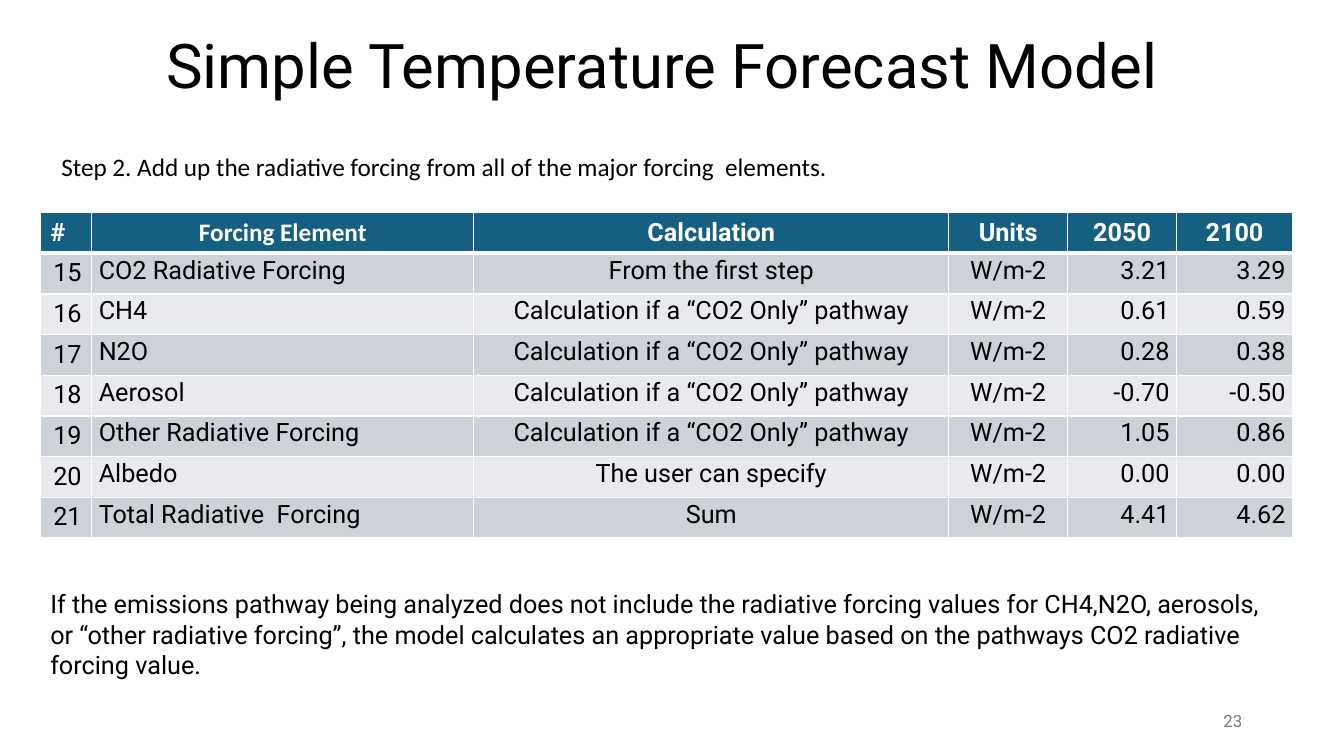
from lxml.etree import SubElement
from pptx import Presentation
from pptx.dml.color import RGBColor
from pptx.enum.text import MSO_ANCHOR, MSO_AUTO_SIZE, PP_ALIGN
from pptx.oxml.ns import qn
from pptx.util import Inches, Pt

BLACK = RGBColor(0x00, 0x00, 0x00)
WHITE = RGBColor(0xFF, 0xFF, 0xFF)
GREY = RGBColor(0x79, 0x79, 0x79)
TEAL = RGBColor(0x15, 0x60, 0x82)
BANDS = [RGBColor(0xCC, 0xD2, 0xD8), RGBColor(0xE8, 0xEA, 0xED)]
LEFT, CENTER, RIGHT = PP_ALIGN.LEFT, PP_ALIGN.CENTER, PP_ALIGN.RIGHT

TITLE = "Simple Temperature Forecast Model"
STEP = "Step 2. Add up the radiative forcing from all of the major forcing  elements."
NOTE = (
    "If the emissions pathway being analyzed does not include the radiative forcing "
    "values for CH4,N2O, aerosols, or “other radiative forcing”, the model calculates "
    "an appropriate value based on the pathways CO2 radiative forcing value."
)
PAGE = "23"

HEADERS = ["#", "Forcing Element", "Calculation", "Units", "2050", "2100"]
PATHWAY = "Calculation if a “CO2 Only” pathway"
UNITS = "W/m-2"
FIRST_NUMBER = 15
FORCINGS = [
    ("CO2 Radiative Forcing", "From the first step", "3.21", "3.29"),
    ("CH4", PATHWAY, "0.61", "0.59"),
    ("N2O", PATHWAY, "0.28", "0.38"),
    ("Aerosol", PATHWAY, "-0.70", "-0.50"),
    ("Other Radiative Forcing", PATHWAY, "1.05", "0.86"),
    ("Albedo", "The user can specify", "0.00", "0.00"),
    ("Total Radiative  Forcing", "Sum", "4.41", "4.62"),
]
COL_WIDTHS = [0.51, 3.79, 4.71, 1.18, 1.08, 1.15]
COL_ALIGNS = [RIGHT, LEFT, CENTER, CENTER, RIGHT, RIGHT]
TABLE_HEIGHT = 3.23


def write(tf, text, size=18, color=BLACK, align=LEFT, font="Roboto", bold=False):
    p = tf.paragraphs[0]
    p.alignment = align
    r = p.add_run()
    r.text = text
    r.font.name = font
    r.font.size = Pt(size)
    r.font.bold = bold
    r.font.color.rgb = color
    return p


def add_text(s, x, y, w, h):
    tf = s.shapes.add_textbox(Inches(x), Inches(y), Inches(w), Inches(h)).text_frame
    tf.word_wrap = True
    return tf


def set_borders(cell, widths):
    tcPr = cell._tc.get_or_add_tcPr()
    for side, width in zip("LRTB", widths):
        ln = SubElement(tcPr, qn(f"a:ln{side}"), w=str(Pt(width)))
        fill = SubElement(ln, qn("a:solidFill"))
        SubElement(fill, qn("a:srgbClr"), val=str(WHITE))


def fill_cell(cell, color, widths):
    set_borders(cell, widths)
    cell.fill.solid()
    cell.fill.fore_color.rgb = color


def add_forcing_table(s):
    n_rows = len(FORCINGS) + 1
    table = s.shapes.add_table(
        n_rows, len(HEADERS), Inches(0.4), Inches(2.11),
        Inches(sum(COL_WIDTHS)), Inches(TABLE_HEIGHT),
    ).table
    for col, width in zip(table.columns, COL_WIDTHS):
        col.width = Inches(width)
    for row in table.rows:
        row.height = Inches(TABLE_HEIGHT / n_rows)

    for j, text in enumerate(HEADERS):
        cell = table.cell(0, j)
        fill_cell(cell, TEAL, (1, 1, 1, 3))
        write(cell.text_frame, text, color=WHITE, bold=True,
              align=CENTER if j else LEFT, font="Calibri" if j == 1 else "Roboto")

    for i, (element, calculation, *values) in enumerate(FORCINGS):
        row = [str(FIRST_NUMBER + i), element, calculation, UNITS, *values]
        for j, text in enumerate(row):
            cell = table.cell(i + 1, j)
            fill_cell(cell, BANDS[i % 2], (1, 1, 1 if i else 3, 1))
            p = write(cell.text_frame, text, align=COL_ALIGNS[j])
            if j:
                cell.vertical_anchor = MSO_ANCHOR.MIDDLE
                cell.margin_left = cell.margin_right = Inches(0.07)
                cell.margin_top = cell.margin_bottom = 0
                p.line_spacing = Pt(16.5)
                p.space_after = Pt(10)


def main():
    prs = Presentation()
    prs.slide_width, prs.slide_height = Inches(13.33), Inches(7.5)
    s = prs.slides.add_slide(prs.slide_layouts[5])

    title = s.shapes.title
    title.left, title.top = Inches(0.82), Inches(-0.04)
    title.width, title.height = Inches(11.5), Inches(1.45)
    tf = title.text_frame
    tf.vertical_anchor = MSO_ANCHOR.MIDDLE
    tf.auto_size = MSO_AUTO_SIZE.NONE
    write(tf, TITLE, size=44, align=CENTER).line_spacing = 0.9

    p = write(add_text(s, 0.51, 1.41, 12.74, 0.43), STEP, font="Calibri")
    p.line_spacing = 1.15
    p.space_after = Pt(10)

    add_forcing_table(s)
    write(add_text(s, 0.4, 5.79, 12.42, 1.01), NOTE)

    tf = add_text(s, 9.42, 6.95, 3, 0.4)
    tf.vertical_anchor = MSO_ANCHOR.MIDDLE
    write(tf, PAGE, size=12, color=GREY, align=RIGHT)

    prs.save("out.pptx")


if __name__ == "__main__":
    main()
